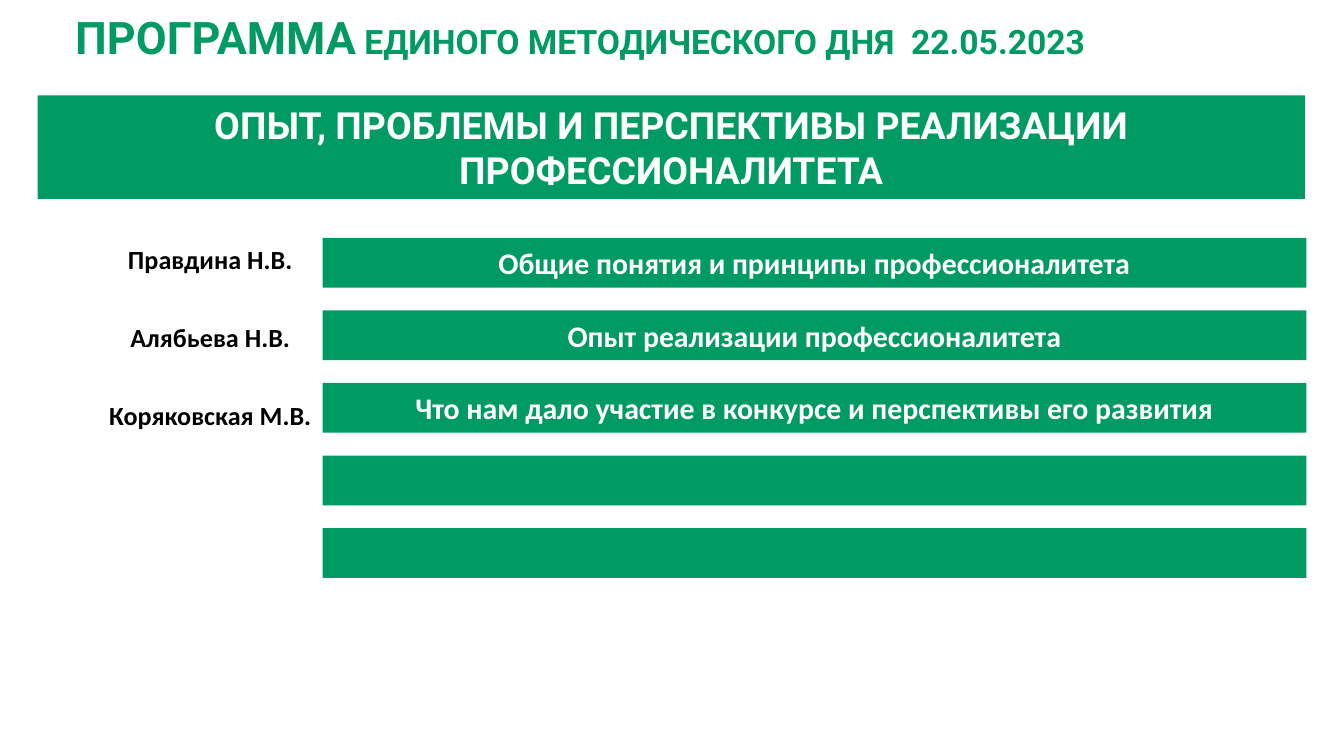
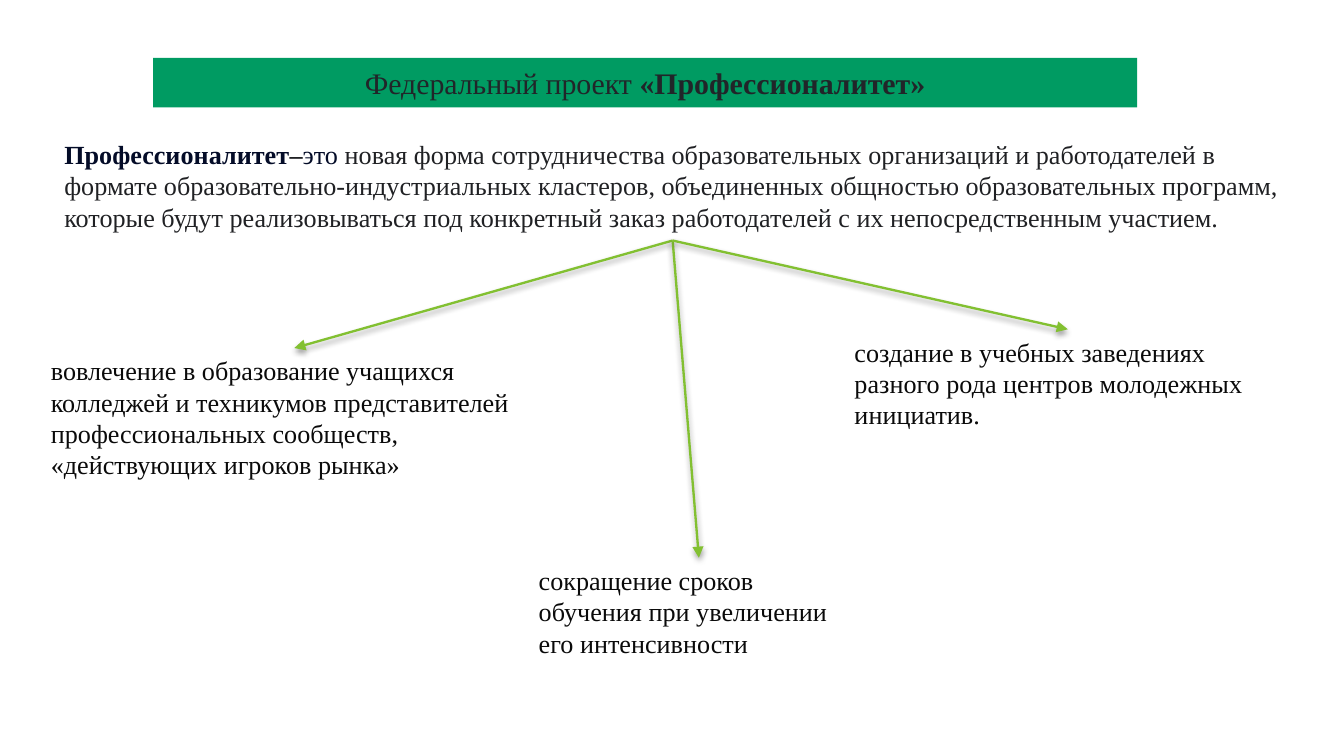
from lxml import etree
from pptx import Presentation
from pptx.dml.color import RGBColor
from pptx.enum.shapes import MSO_CONNECTOR, MSO_SHAPE
from pptx.enum.text import MSO_ANCHOR, MSO_AUTO_SIZE, PP_ALIGN
from pptx.oxml import parse_xml
from pptx.oxml.ns import nsdecls, qn
from pptx.util import Inches, Pt

LEFT, CENTER = PP_ALIGN.LEFT, PP_ALIGN.CENTER
TOP, MIDDLE = MSO_ANCHOR.TOP, MSO_ANCHOR.MIDDLE
NO_FIT = MSO_AUTO_SIZE.NONE
RECT, STRAIGHT = MSO_SHAPE.RECTANGLE, MSO_CONNECTOR.STRAIGHT

HUES = {
    "band": "009B62", "title": "019A62", "arrow": "82C031",
    "white": "FFFFFF", "black": "000000", "navy": "040C28",
    "gray": "202124", "slate": "212529", "ink": "0A0A0A",
}
SERIF = "Times New Roman"
BAR_W, BAR_H = 7.32, 0.37
SHADOW = (
    f'<a:effectLst {nsdecls("a")}><a:outerShdw blurRad="40000" dist="20000" '
    f'dir="5400000" rotWithShape="0"><a:srgbClr val="{HUES["black"]}">'
    '<a:alpha val="38000"/></a:srgbClr></a:outerShdw></a:effectLst>'
)

TOPICS = [
    "Общие понятия и принципы профессионалитета",
    "Опыт реализации профессионалитета",
    "Что нам дало участие в конкурсе и перспективы его развития",
    "",
    "",
]
NAMES = ["Правдина Н.В.", "Алябьева Н.В.", "Коряковская М.В."]
GOALS = [
    ((0.28, 2.59, 3.82, 1.04),
     "вовлечение в образование учащихся колледжей и техникумов представителей "
     "профессиональных сообществ, «действующих игроков рынка»"),
    ((3.91, 4.15, 2.58, 0.81),
     "сокращение сроков обучения при увеличении его интенсивности"),
    ((6.26, 2.45, 3.37, 0.81),
     "создание в учебных заведениях разного рода центров молодежных инициатив."),
]


def color(name):
    """Return the named colour."""
    return RGBColor.from_string(HUES[name])


def paint(shape, hue):
    """Fill a shape without an outline."""
    shape.fill.solid()
    shape.fill.fore_color.rgb = color(hue)
    shape.line.fill.background()


def write(shape, runs, font, size, hue, bold=None, align=LEFT, anchor=TOP):
    """Write runs, each a text and its own font settings, as one paragraph."""
    frame = shape.text_frame
    frame.word_wrap = True
    frame.auto_size = NO_FIT
    frame.vertical_anchor = anchor
    para = frame.paragraphs[0]
    para.alignment = align
    base = para.font
    base.name, base.size, base.bold = font, Pt(size), bold
    base.color.rgb = color(hue)
    for text, own in runs:
        run = para.add_run()
        run.text = text
        run.font.name = font
        run.font.size = Pt(own.get("size", size))
        run.font.bold = own.get("bold", bold)
        run.font.color.rgb = color(own.get("hue", hue))


def label(slide, box, runs, *style, **more):
    """Add a text box and return it."""
    shape = slide.shapes.add_textbox(*map(Inches, box))
    write(shape, runs, *style, **more)
    return shape


def bar(slide, box, text, font, size):
    """Add a green bar with bold white text, if any."""
    shape = slide.shapes.add_shape(RECT, *map(Inches, box))
    shape.shadow.inherit = False
    paint(shape, "band")
    if text:
        write(shape, [(text, {})], font, size, "white", True, CENTER, MIDDLE)


def head(slide, box, runs, *style, **more):
    """Place and write the slide title."""
    title = slide.shapes.title
    title.left, title.top, title.width, title.height = map(Inches, box)
    write(title, runs, *style, **more)
    return title


def arrow(slide, start, end):
    """Join the bottom of one box to the top of another."""
    line = slide.shapes.add_connector(STRAIGHT, 0, 0, 0, 0)
    line.begin_connect(start, 2)
    line.end_connect(end, 0)
    line.line.color.rgb = color("arrow")
    line.line.width = Pt(1.25)
    stroke = line.line._get_or_add_ln()
    etree.SubElement(stroke, qn("a:tailEnd"), type="triangle")
    stroke.addnext(parse_xml(SHADOW))


def agenda(slide, x, y):
    """List the speakers beside their topics."""
    for i, topic in enumerate(TOPICS):
        bar(slide, (x + 2.27, y + 0.54 * i, BAR_W, BAR_H), topic, "Calibri", 16)
    for i, name in enumerate(NAMES):
        label(slide, (x, y - 0.01 + 0.58 * i, 2.87, 0.34), [(name, {})],
              "Calibri", 14, "black", True, align=CENTER)


def program(slide):
    """Build the programme of the day."""
    head(slide, (0.46, 0.02, 9.1, 0.81),
         [("ПРОГРАММА", {}),
          (" ЕДИНОГО МЕТОДИЧЕСКОГО ДНЯ  22.05.2023", {"size": 18})],
         "Roboto", 24, "title", True)
    bar(slide, (0.28, 0.71, 9.43, 0.77),
        "ОПЫТ, ПРОБЛЕМЫ И ПЕРСПЕКТИВЫ РЕАЛИЗАЦИИ ПРОФЕССИОНАЛИТЕТА",
        "Roboto", 20)
    agenda(slide, 0.13, 1.77)


def project(slide):
    """Build the definition with arrows to its goals."""
    title = head(slide, (1.14, 0.43, BAR_W, BAR_H),
                 [("Федеральный проект ", {}),
                  ("«Профессионалитет»", {"bold": True})],
                 SERIF, 16, "slate", align=CENTER, anchor=MIDDLE)
    paint(title, "band")
    core = label(slide, (0.38, 0.98, 9.25, 0.81), [
        ("Профессионалитет", {"hue": "navy", "bold": True}),
        ("–", {"bold": True}),
        ("это ", {"hue": "navy"}),
        ("новая форма сотрудничества образовательных организаций и "
         "работодателей в формате образовательно-индустриальных кластеров, "
         "объединенных общностью образовательных программ, которые будут "
         "реализовываться под конкретный заказ работодателей с их "
         "непосредственным участием.", {}),
    ], SERIF, 14, "gray")
    for box, text in GOALS:
        goal = label(slide, box, [(text, {})], SERIF, 14, "ink")
        arrow(slide, core, goal)


def main():
    """Build and save both slides in the 16:9 format."""
    deck = Presentation()
    deck.slide_width = Inches(10)
    deck.slide_height = deck.slide_width * 9 // 16
    layout = deck.slide_layouts[5]
    for build in (program, project):
        build(deck.slides.add_slide(layout))
    deck.save("out.pptx")


if __name__ == "__main__":
    main()
